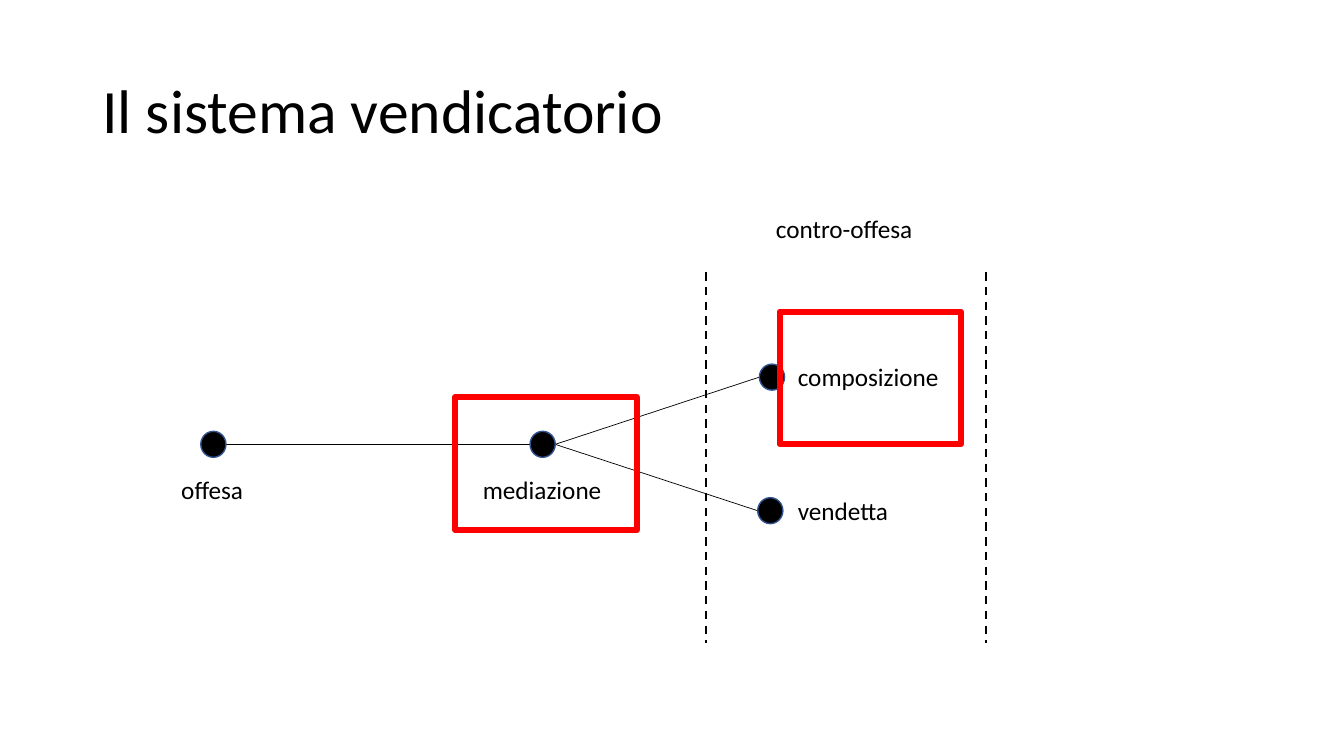
from dataclasses import dataclass

from lxml.etree import SubElement
from pptx import Presentation
from pptx.dml.color import RGBColor
from pptx.enum.dml import MSO_LINE
from pptx.enum.shapes import MSO_CONNECTOR, MSO_SHAPE
from pptx.enum.text import MSO_ANCHOR, MSO_AUTO_SIZE, PP_ALIGN
from pptx.oxml.ns import qn
from pptx.util import Inches, Pt

SLIDE_WIDTH, SLIDE_HEIGHT = Inches(13.33), Inches(7.5)
COLUMNS, ROWS = 16, 9
BLACK, NAVY, RED = "000000", "325491", "FF0000"
FONT = "Calibri"


@dataclass(frozen=True)
class Area:
    """Rectangle in grid columns and rows."""
    column: float
    row: float
    columns: float
    rows: float


@dataclass(frozen=True)
class Stage:
    """Dot of the diagram, placed by its left edge and its middle row."""
    column: float
    row: float
    width: float = 0.3
    height: float = 0.31

    @property
    def right(self) -> float:
        return self.column + self.width


@dataclass(frozen=True)
class Label:
    """Caption and the area it fills."""
    wording: str
    area: Area


OFFESA = Stage(2.39, 5.29)
MEDIAZIONE = Stage(6.31, 5.29)
COMPOSIZIONE = Stage(9.04, 4.49)
VENDETTA = Stage(9.02, 6.08)
STAGES = (OFFESA, MEDIAZIONE, COMPOSIZIONE, VENDETTA)
STEPS = ((OFFESA, MEDIAZIONE), (MEDIAZIONE, COMPOSIZIONE), (MEDIAZIONE, VENDETTA))
LABELS = (
    Label("offesa", Area(2.04, 5.59, 1, 0.48)),
    Label("mediazione", Area(5.63, 5.59, 1.67, 0.48)),
    Label("composizione", Area(9.38, 4.24, 1.93, 0.48)),
    Label("vendetta", Area(9.38, 5.84, 1.33, 0.48)),
    Label("contro-offesa", Area(9.12, 2.48, 1.88, 0.48)),
)
BOUNDARY_COLUMNS = (8.4, 11.74)
BOUNDARY_TOP, BOUNDARY_BOTTOM = 3.24, 7.66
HIGHLIGHTS = (Area(5.42, 4.73, 2.16, 1.58), Area(9.28, 3.71, 2.16, 1.58))


def color(code: str) -> RGBColor:
    """Turn a hex string into a colour."""
    return RGBColor.from_string(code)


def across(columns: float) -> int:
    """Convert grid columns to a length."""
    return round(SLIDE_WIDTH * columns / COLUMNS)


def down(rows: float) -> int:
    """Convert grid rows to a length."""
    return round(SLIDE_HEIGHT * rows / ROWS)


def box(area: Area) -> tuple[int, int, int, int]:
    """Convert an area to left, top, width and height."""
    return across(area.column), down(area.row), across(area.columns), down(area.rows)


def set_font(paragraph, size: float) -> None:
    """Apply the slide's font to a paragraph."""
    paragraph.font.name = FONT
    paragraph.font.size = Pt(size)
    paragraph.font.color.rgb = color(BLACK)


def write_title(slide, wording: str, area: Area) -> None:
    """Place and format the title."""
    title = slide.shapes.title
    title.left, title.top, title.width, title.height = box(area)
    frame = title.text_frame
    frame.text = wording
    frame.auto_size = MSO_AUTO_SIZE.NONE
    frame.vertical_anchor = MSO_ANCHOR.MIDDLE
    heading = frame.paragraphs[0]
    heading.alignment = PP_ALIGN.LEFT
    heading.line_spacing = 0.9
    set_font(heading, 44)


def draw_line(slide, start: tuple[float, float], end: tuple[float, float],
              weight: float, dashed: bool = False) -> None:
    """Draw a black line between two grid points."""
    line = slide.shapes.add_connector(
        MSO_CONNECTOR.STRAIGHT, across(start[0]), down(start[1]), across(end[0]), down(end[1]))
    line.line.color.rgb = color(BLACK)
    line.line.width = Pt(weight)
    if dashed:
        line.line.dash_style = MSO_LINE.DASH
    SubElement(line._element.spPr, qn("a:effectLst"))


def draw_shape(slide, kind: MSO_SHAPE, area: Area, outline: str, weight: float,
               fill: str | None = None) -> None:
    """Draw an outlined shape, hollow unless a fill is given."""
    shape = slide.shapes.add_shape(kind, *box(area))
    shape.shadow.inherit = False
    shape.line.color.rgb = color(outline)
    shape.line.width = Pt(weight)
    if fill:
        shape.fill.solid()
        shape.fill.fore_color.rgb = color(fill)
    else:
        shape.fill.background()


def write_label(slide, label: Label) -> None:
    """Write a caption on one line."""
    frame = slide.shapes.add_textbox(*box(label.area)).text_frame
    frame.text = label.wording
    frame.word_wrap = False
    frame.auto_size = MSO_AUTO_SIZE.SHAPE_TO_FIT_TEXT
    set_font(frame.paragraphs[0], 18)


def main() -> None:
    """Build the slide and save it."""
    deck = Presentation()
    deck.slide_width, deck.slide_height = SLIDE_WIDTH, SLIDE_HEIGHT
    slide = deck.slides.add_slide(deck.slide_layouts[5])
    write_title(slide, "Il sistema vendicatorio", Area(1.1, 0.48, 13.8, 1.74))
    for origin, target in STEPS:
        draw_line(slide, (origin.right, origin.row), (target.column, target.row), 0.5)
    for stage in STAGES:
        dot = Area(stage.column, stage.row - stage.height / 2, stage.width, stage.height)
        draw_shape(slide, MSO_SHAPE.OVAL, dot, NAVY, 1, BLACK)
    for label in LABELS:
        write_label(slide, label)
    for column in BOUNDARY_COLUMNS:
        draw_line(slide, (column, BOUNDARY_TOP), (column, BOUNDARY_BOTTOM), 1.5, dashed=True)
    for highlight in HIGHLIGHTS:
        draw_shape(slide, MSO_SHAPE.RECTANGLE, highlight, RED, 4.25)
    deck.save("out.pptx")


if __name__ == "__main__":
    main()
